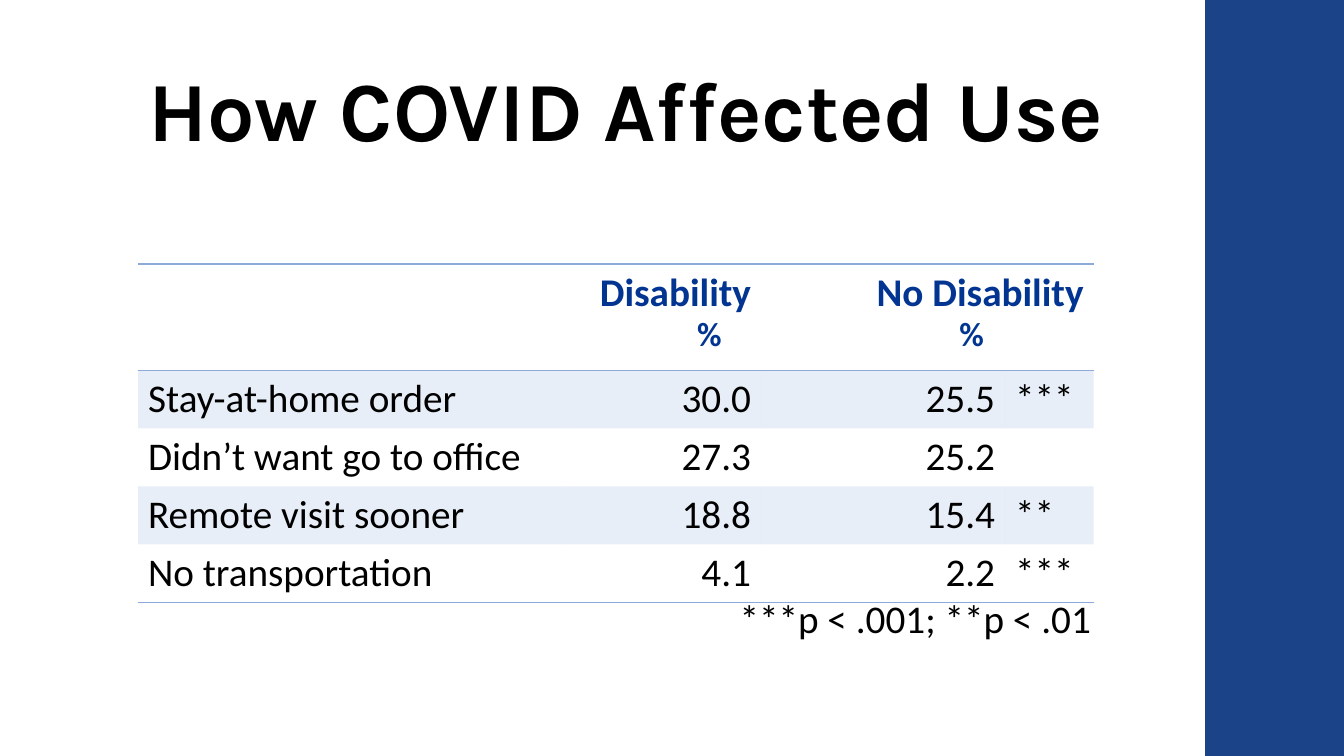
from lxml import etree
from pptx import Presentation
from pptx.dml.color import RGBColor
from pptx.enum.shapes import MSO_SHAPE
from pptx.enum.text import MSO_ANCHOR, MSO_AUTO_SIZE, PP_ALIGN
from pptx.oxml.ns import qn
from pptx.util import Cm, Pt

RECT = MSO_SHAPE.RECTANGLE
BOTTOM = MSO_ANCHOR.BOTTOM
FIXED, GROW = MSO_AUTO_SIZE.NONE, MSO_AUTO_SIZE.SHAPE_TO_FIT_TEXT
LEFT, RIGHT = PP_ALIGN.LEFT, PP_ALIGN.RIGHT

TITLE = "How COVID Affected Use"
HEAD = ("", "Disability", "No Disability", "")
ROWS = [
    ("Stay-at-home order", "30.0", "25.5", "***"),
    ("Didn’t want go to office", "27.3", "25.2", ""),
    ("Remote visit sooner", "18.8", "15.4", "**"),
    ("No transportation", "4.1", "2.2", "***"),
]
ALIGN = (LEFT, RIGHT, RIGHT, LEFT)
NOTE = "***p < .001; **p < .01"
UNIT = "%"

HEX = {"bar": "1B4388", "text": "000000", "head": "013591", "band": "8EAADB"}
PLAIN = "{2D5ABB26-0587-4C30-8999-92F81FD0307C}"  # table style without grid

# Lengths in centimetres
WIDE, HIGH = 33.87, 19.05
BAR = 3.5
EDGE = 3.48
TOP = 6.65
COLS = (10.72, 4.98, 6.15, 2.23)
HEAD_H, ROW_H = 2.68, 1.46
UNIT_X = (17.32, 23.93)
UNIT_Y = 7.77


def color(name):
    return RGBColor.from_string(HEX[name])


def write(para, text, size, tint="text", bold=False, face="Calibri"):
    run = para.add_run()
    run.text = text
    font = run.font
    font.name, font.size, font.bold = face, Pt(size), bold
    font.color.rgb = color(tint)


def label(slide, text, left, top, width, height, size, **look):
    box = slide.shapes.add_textbox(Cm(left), Cm(top), Cm(width), Cm(height))
    frame = box.text_frame
    frame.word_wrap = True
    frame.auto_size = GROW
    write(frame.paragraphs[0], text, size, **look)


def shade(cell):
    """Fill a cell with the band colour at 20 % opacity."""
    cell.fill.solid()
    cell.fill.fore_color.rgb = color("band")
    tint = cell._tc.tcPr.find(".//" + qn("a:srgbClr"))
    etree.SubElement(tint, qn("a:alpha"), val="20000")


def rule(cell, *sides):
    """Draw 1 pt lines on the given sides, T before B."""
    for i, side in enumerate(sides):
        line = etree.Element(qn("a:ln" + side), w=str(Pt(1)))
        fill = etree.SubElement(line, qn("a:solidFill"))
        etree.SubElement(fill, qn("a:srgbClr"), val=HEX["band"])
        cell._tc.tcPr.insert(i, line)


def add_grid(slide):
    count = len(ROWS)
    frame = slide.shapes.add_table(
        count + 1, len(COLS), Cm(EDGE), Cm(TOP),
        Cm(sum(COLS)), Cm(HEAD_H + count * ROW_H))
    grid = frame.table
    grid.first_row = grid.horz_banding = False
    grid._tbl.tblPr.find(qn("a:tableStyleId")).text = PLAIN
    for col, width in zip(grid.columns, COLS):
        col.width = Cm(width)
    for r, row in enumerate([HEAD] + ROWS):
        grid.rows[r].height = Cm(ROW_H if r else HEAD_H)
        for c, text in enumerate(row):
            cell = grid.cell(r, c)
            if r % 2:
                shade(cell)
            else:
                cell.fill.background()
            if r == 0:
                rule(cell, "T", "B")
            elif r == count:
                rule(cell, "B")
            para = cell.text_frame.paragraphs[0]
            para.alignment = ALIGN[c]
            if text:
                write(para, text, 28, "text" if r else "head", r == 0)
    grid.cell(0, 2).merge(grid.cell(0, 3))


def main():
    deck = Presentation()
    deck.slide_width, deck.slide_height = Cm(WIDE), Cm(HIGH)
    slide = deck.slides.add_slide(deck.slide_layouts[5])

    bar = slide.shapes.add_shape(RECT, Cm(WIDE - BAR), 0, Cm(BAR), Cm(HIGH))
    bar.shadow.inherit = False
    bar.fill.solid()
    bar.fill.fore_color.rgb = color("bar")
    bar.line.fill.background()

    title = slide.shapes.title
    title.left, title.top = Cm(EDGE), Cm(1.09)
    title.width, title.height = Cm(26.54), Cm(3.07)
    frame = title.text_frame
    frame.word_wrap = True
    frame.auto_size = FIXED
    frame.vertical_anchor = BOTTOM
    para = frame.paragraphs[0]
    para.alignment = LEFT
    para.line_spacing = 0.9
    write(para, TITLE, 60, bold=True, face="Karla")

    add_grid(slide)
    label(slide, NOTE, 18.39, 14.86, 9.78, 1.45, 28)
    for left in UNIT_X:
        label(slide, UNIT, left, UNIT_Y, 3.25, 1.27, 24, tint="head", bold=True)
    deck.save("out.pptx")


if __name__ == "__main__":
    main()
